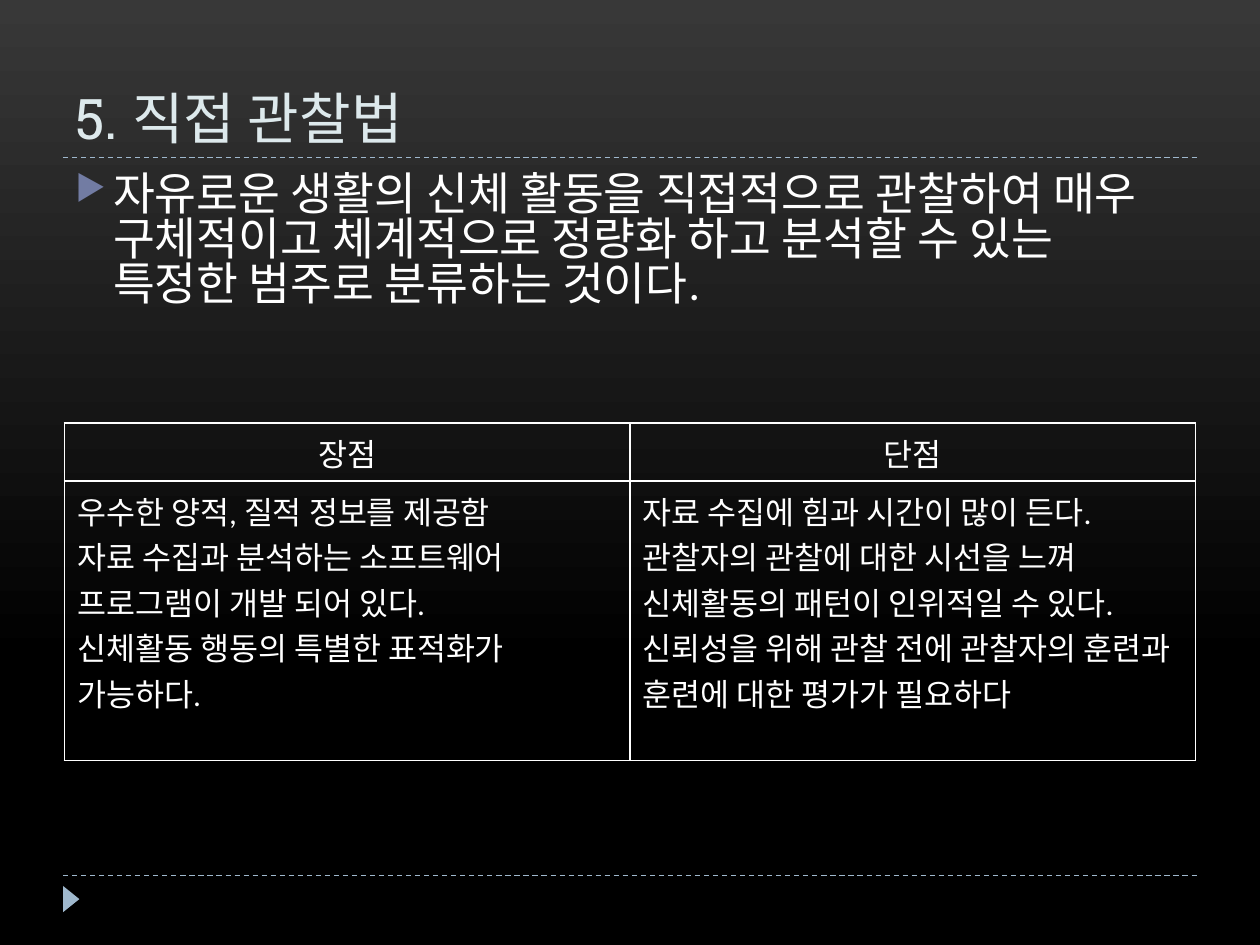
from copy import deepcopy
from dataclasses import dataclass

from lxml import etree
from pptx import Presentation
from pptx.dml.color import RGBColor
from pptx.enum.dml import MSO_LINE
from pptx.enum.shapes import MSO_CONNECTOR, MSO_SHAPE
from pptx.enum.text import MSO_ANCHOR, PP_ALIGN
from pptx.oxml.ns import qn
from pptx.util import Cm, Pt

DASH = MSO_LINE.DASH
STRAIGHT = MSO_CONNECTOR.STRAIGHT
TRIANGLE = MSO_SHAPE.ISOSCELES_TRIANGLE
TOP, BOTTOM = MSO_ANCHOR.TOP, MSO_ANCHOR.BOTTOM
LEFT, CENTER = PP_ALIGN.LEFT, PP_ALIGN.CENTER


@dataclass(frozen=True)
class Theme:
    heading_font: str = "Roboto Slab"
    body_font: str = "Calibri"
    heading_size: int = 32
    body_size: int = 26
    table_size: int = 18
    heading: str = "DDE9EC"
    text: str = "FFFFFF"
    accent: str = "9FB8CD"
    bullet: str = "727CA3"
    gradient: tuple = ((0, "000000"), (0.3, "000000"), (1, "383838"))


THEME = Theme()
TABLE_ROWS = (
    (("장점",), ("단점",)),
    (
        (
            "우수한 양적, 질적 정보를 제공함",
            "자료 수집과 분석하는 소프트웨어 프로그램이 개발 되어 있다.",
            "신체활동 행동의 특별한 표적화가 가능하다.",
        ),
        (
            "자료 수집에 힘과 시간이 많이 든다.",
            "관찰자의 관찰에 대한 시선을 느껴 신체활동의 패턴이 인위적일 수 있다.",
            "신뢰성을 위해 관찰 전에 관찰자의 훈련과 훈련에 대한 평가가 필요하다",
        ),
    ),
)


def rgb(value):
    return RGBColor.from_string(value)


def style_paragraph(paragraph, font_name, size, color):
    paragraph.font.name = font_name
    paragraph.font.size = Pt(size)
    paragraph.font.color.rgb = rgb(color)


def paint_background(slide):
    fill = slide.background.fill
    fill.gradient()
    fill.gradient_angle = 90
    stop_list = slide.element.find(f".//{qn('a:gsLst')}")
    stop_list.insert(1, deepcopy(stop_list[0]))
    for stop, (position, color) in zip(fill.gradient_stops, THEME.gradient):
        stop.position = position
        stop.color.rgb = rgb(color)


def add_rule(slide, left, top, width):
    rule = slide.shapes.add_connector(
        STRAIGHT, Cm(left), Cm(top), Cm(left + width), Cm(top)
    )
    rule.line.color.rgb = rgb(THEME.accent)
    rule.line.width = Pt(0.75)
    rule.line.dash_style = DASH
    etree.SubElement(rule.element.spPr, qn("a:effectLst"))


def add_footer(slide, left, top, width):
    add_rule(slide, left, top, width)
    marker = slide.shapes.add_shape(
        TRIANGLE, Cm(left - 0.1), Cm(top + 0.31), Cm(0.53), Cm(0.33)
    )
    marker.rotation = 90
    marker.shadow.inherit = False
    marker.fill.solid()
    marker.fill.fore_color.rgb = rgb(THEME.accent)
    marker.line.fill.background()


def add_text(slide, left, top, width, height, text, anchor):
    box = slide.shapes.add_textbox(Cm(left), Cm(top), Cm(width), Cm(height))
    box.text_frame.word_wrap = True
    box.text_frame.vertical_anchor = anchor
    paragraph = box.text_frame.paragraphs[0]
    paragraph.text = text
    return paragraph


def add_heading(slide, left, top, width, height):
    paragraph = add_text(slide, left, top, width, height, "5. 직접 관찰법", BOTTOM)
    style_paragraph(paragraph, THEME.heading_font, THEME.heading_size, THEME.heading)
    add_rule(slide, left, top + height, width)


def add_definition(slide, left, top, width, height):
    paragraph = add_text(
        slide, left, top, width, height,
        "자유로운 생활의 신체 활동을 직접적으로 관찰하여 매우 구체적이고 "
        "체계적으로 정량화 하고 분석할 수 있는 특정한 범주로 분류하는 것이다.",
        TOP,
    )
    paragraph.line_spacing = 0.83
    properties = paragraph._p.get_or_add_pPr()
    properties.set("marL", str(Cm(0.76)))
    properties.set("indent", str(Cm(-0.76)))
    bullet_color = etree.SubElement(properties, qn("a:buClr"))
    etree.SubElement(bullet_color, qn("a:srgbClr"), val=THEME.bullet)
    etree.SubElement(properties, qn("a:buSzPct"), val="76000")
    etree.SubElement(properties, qn("a:buChar"), char="▶")
    style_paragraph(paragraph, THEME.body_font, THEME.body_size, THEME.text)


def add_cell_borders(cell):
    properties = cell._tc.get_or_add_tcPr()
    for index, side in enumerate(("lnL", "lnR", "lnT", "lnB")):
        border = etree.Element(qn(f"a:{side}"), w=str(Pt(1)))
        fill = etree.SubElement(border, qn("a:solidFill"))
        etree.SubElement(fill, qn("a:srgbClr"), val=THEME.text)
        properties.insert(index, border)


def add_comparison(slide, left, top, width, row_heights):
    column_count = len(TABLE_ROWS[0])
    table = slide.shapes.add_table(
        len(TABLE_ROWS), column_count,
        Cm(left), Cm(top), Cm(width), Cm(sum(row_heights)),
    ).table
    table.first_row = table.horz_banding = False
    for column in table.columns:
        column.width = Cm(width / column_count)
    for row_index, (texts, height) in enumerate(zip(TABLE_ROWS, row_heights)):
        table.rows[row_index].height = Cm(height)
        for column_index, lines in enumerate(texts):
            cell = table.cell(row_index, column_index)
            cell.fill.background()
            add_cell_borders(cell)
            cell.text = "\n".join(lines)
            for paragraph in cell.text_frame.paragraphs:
                paragraph.alignment = CENTER if row_index == 0 else LEFT
                style_paragraph(
                    paragraph, THEME.body_font, THEME.table_size, THEME.text
                )


def main():
    presentation = Presentation()
    presentation.slide_width, presentation.slide_height = Cm(25.4), Cm(19.05)
    slide = presentation.slides.add_slide(presentation.slide_layouts[6])
    margin, content_width = 1.27, 22.86
    paint_background(slide)
    add_footer(slide, margin, 17.65, content_width)
    add_heading(slide, margin, 0.43, content_width, 2.74)
    add_definition(slide, margin, 3.38, content_width, 13.72)
    add_comparison(slide, 1.3, 8.53, 22.8, (1.17, 5.63))
    presentation.save("out.pptx")


if __name__ == "__main__":
    main()
